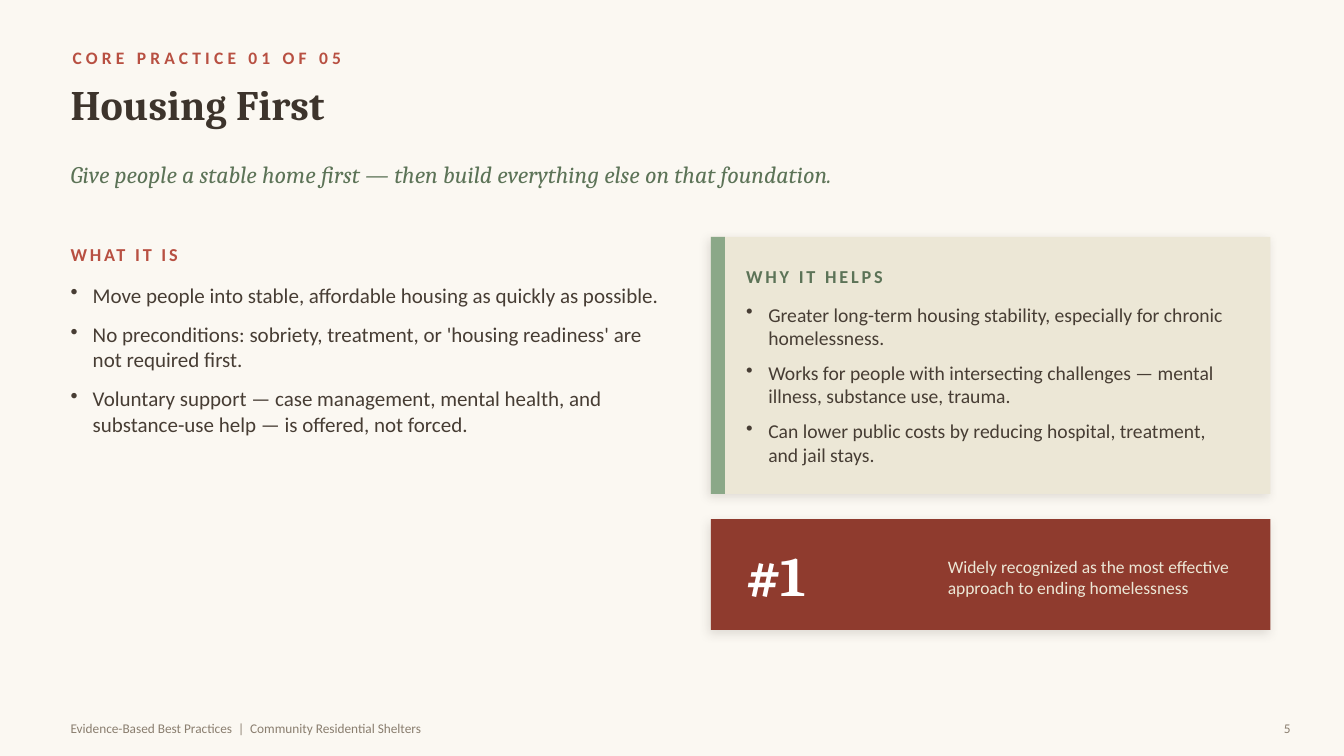
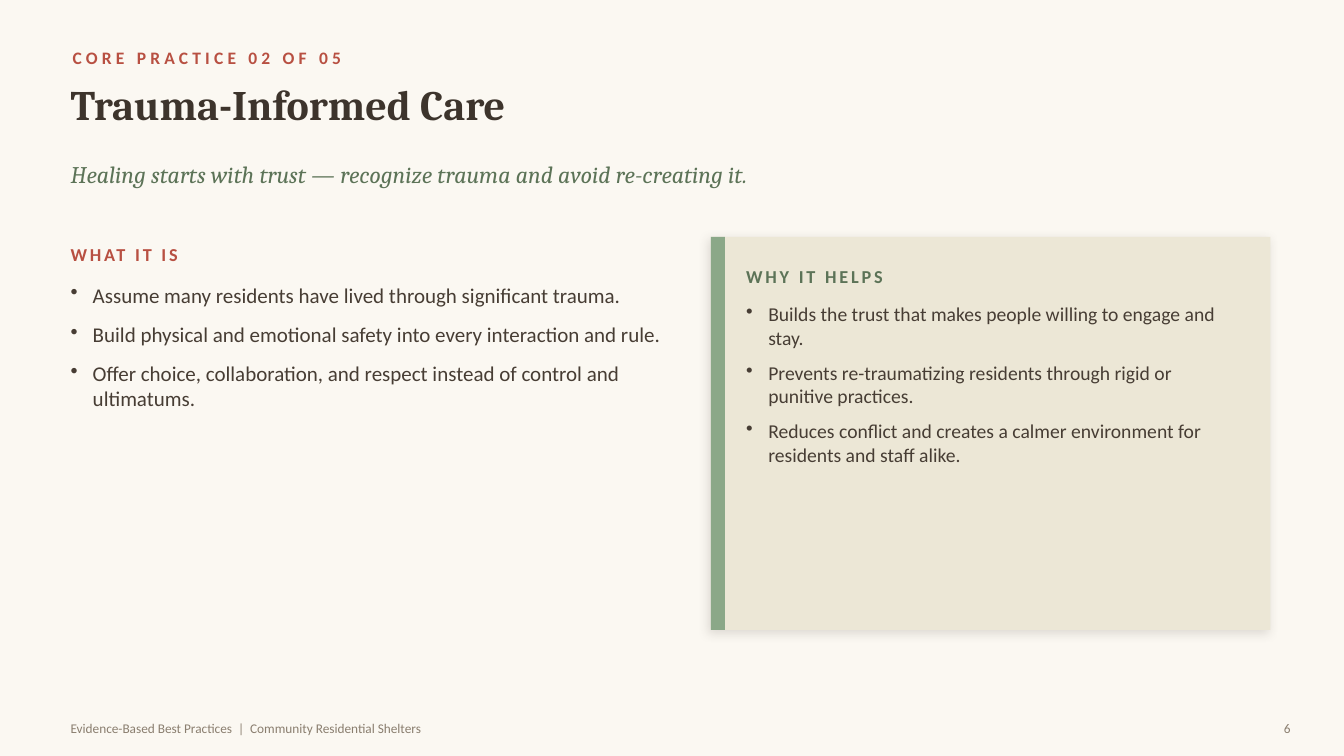
from lxml.etree import SubElement
from pptx import Presentation
from pptx.dml.color import RGBColor
from pptx.enum.shapes import MSO_SHAPE
from pptx.enum.text import MSO_ANCHOR, PP_ALIGN
from pptx.oxml.ns import qn
from pptx.util import Inches, Pt


class Theme:
    paper = "FBF8F2"
    sand = "ECE7D6"
    sage = "8BA888"
    moss = "5C7357"
    clay = "B85042"
    brick = "8F3B2E"
    ink = "3D342C"
    body = "473D34"
    muted = "8A7E6F"
    white = "FFFFFF"
    serif = "Cambria"
    sans = "Calibri"
    kicker = {"name": sans, "size": Pt(12.5), "bold": True, "color": clay, "spacing": 3}
    title = {"name": serif, "size": Pt(30), "bold": True, "color": ink}
    tagline = {"name": serif, "size": Pt(17), "italic": True, "color": moss}
    what_heading = {"name": sans, "size": Pt(13), "bold": True, "color": clay, "spacing": 2}
    why_heading = {**what_heading, "color": moss}
    what_list = {"name": sans, "size": Pt(15), "color": body}
    why_list = {**what_list, "size": Pt(14)}
    figure = {"name": serif, "size": Pt(40), "bold": True, "color": white}
    caption = {"name": sans, "size": Pt(12.5), "color": sand}
    footer = {"name": sans, "size": Pt(9.5), "color": muted}


class PracticeDeck:
    """Build core practice slides in one shared style."""

    left = 0.7
    card_left = 7.05
    card_text_left = 7.4
    card_top = 2.35
    card_width = 5.55
    card_bottom = 6.25
    stat_height = 1.1
    gap = 0.25

    def __init__(self, theme):
        self.theme = theme
        self.deck = Presentation()
        self.deck.slide_width = Inches(13.33)
        self.deck.slide_height = Inches(7.5)
        fill = self.deck.slide_master.background.fill
        fill.solid()
        fill.fore_color.rgb = RGBColor.from_string(theme.paper)
        self.slide = None

    def add_span(self, para, text, style):
        span = para.add_run()
        span.text = text
        for name, value in style.items():
            if name == "color":
                span.font.color.rgb = RGBColor.from_string(value)
            elif name == "spacing":
                span.font._element.set("spc", str(value * 100))
            else:
                setattr(span.font, name, value)

    def add_frame(self, left, top, width, height, anchor):
        box = self.slide.shapes.add_textbox(*map(Inches, (left, top, width, height)))
        frame = box.text_frame
        settings = {"word_wrap": True, "vertical_anchor": anchor, "margin_left": 0,
                    "margin_top": 0, "margin_right": 0, "margin_bottom": 0}
        for name, value in settings.items():
            setattr(frame, name, value)
        return frame

    def add_text(self, area, text, style, anchor=MSO_ANCHOR.MIDDLE, align=PP_ALIGN.LEFT):
        para = self.add_frame(*area, anchor).paragraphs[0]
        para.alignment = align
        self.add_span(para, text, style)

    def add_bullets(self, area, items, style, space_after):
        frame = self.add_frame(*area, MSO_ANCHOR.TOP)
        for index, item in enumerate(items):
            para = frame.add_paragraph() if index else frame.paragraphs[0]
            para.space_after = Pt(space_after)
            properties = para._p.get_or_add_pPr()
            properties.set("marL", str(Inches(0.22)))
            properties.set("indent", str(-Inches(0.22)))
            SubElement(properties, qn("a:buChar"), char="•")
            self.add_span(para, item, style)

    def add_panel(self, top, width, height, color, shadow=True):
        panel = self.slide.shapes.add_shape(
            MSO_SHAPE.RECTANGLE, *map(Inches, (self.card_left, top, width, height)))
        panel.fill.solid()
        panel.fill.fore_color.rgb = RGBColor.from_string(color)
        panel.line.fill.background()
        panel.shadow.inherit = False
        if shadow:
            effects = panel._element.spPr.find(qn("a:effectLst"))
            outer = SubElement(effects, qn("a:outerShdw"), blurRad=str(Pt(7)),
                               dist=str(Pt(3)), dir=str(135 * 60000),
                               algn="bl", rotWithShape="0")
            tint = SubElement(outer, qn("a:srgbClr"), val=self.theme.ink)
            SubElement(tint, qn("a:alpha"), val="14000")

    def add_header(self, kicker, title, tagline):
        theme = self.theme
        self.add_text((0.72, 0.42, 11.5, 0.3), kicker, theme.kicker)
        self.add_text((self.left, 0.78, 12.2, 0.9), title, theme.title, MSO_ANCHOR.TOP)
        self.add_text((self.left, 1.58, 11.9, 0.55), tagline, theme.tagline, MSO_ANCHOR.TOP)

    def add_what(self, items):
        self.add_text((self.left, self.card_top, 6, 0.35), "WHAT IT IS",
                      self.theme.what_heading)
        self.add_bullets((self.left, 2.8, 6, 2.6), items, self.theme.what_list, 10)

    def add_why(self, items, bottom):
        height = bottom - self.card_top
        self.add_panel(self.card_top, self.card_width, height, self.theme.sand)
        self.add_panel(self.card_top, 0.14, height, self.theme.sage, shadow=False)
        self.add_text((self.card_text_left, 2.57, 4.95, 0.35), "WHY IT HELPS",
                      self.theme.why_heading)
        self.add_bullets((self.card_text_left, 3, 4.9, bottom - 3.25), items,
                         self.theme.why_list, 8)

    def add_stat(self, figure, caption):
        top = self.card_bottom - self.stat_height
        self.add_panel(top, self.card_width, self.stat_height, self.theme.brick)
        self.add_text((self.card_text_left, top + 0.12, 2.1, 0.85), figure, self.theme.figure)
        self.add_text((9.4, top + 0.12, 2.95, 0.9), caption, self.theme.caption)

    def add_footer(self, number):
        self.add_text((self.left, 7.06, 10.5, 0.32),
                      "Evidence-Based Best Practices  |  Community Residential Shelters",
                      self.theme.footer)
        self.add_text((12.2, 7.06, 0.6, 0.32), str(number), self.theme.footer,
                      align=PP_ALIGN.RIGHT)

    def add_practice(self, number, page, title, tagline, what, why, stat=None):
        self.slide = self.deck.slides.add_slide(self.deck.slide_layouts[6])
        self.add_header(f"CORE PRACTICE {number:02d} OF 05", title, tagline)
        self.add_what(what)
        stat_space = self.stat_height + self.gap if stat else 0
        self.add_why(why, self.card_bottom - stat_space)
        if stat:
            self.add_stat(*stat)
        self.add_footer(page)


PRACTICES = [
    {
        "title": "Housing First",
        "tagline": "Give people a stable home first — then build everything else "
                   "on that foundation.",
        "what": [
            "Move people into stable, affordable housing as quickly as possible.",
            "No preconditions: sobriety, treatment, or 'housing readiness' are "
            "not required first.",
            "Voluntary support — case management, mental health, and "
            "substance-use help — is offered, not forced.",
        ],
        "why": [
            "Greater long-term housing stability, especially for chronic homelessness.",
            "Works for people with intersecting challenges — mental illness, "
            "substance use, trauma.",
            "Can lower public costs by reducing hospital, treatment, and jail stays.",
        ],
        "stat": ("#1", "Widely recognized as the most effective approach to "
                       "ending homelessness"),
    },
    {
        "title": "Trauma-Informed Care",
        "tagline": "Healing starts with trust — recognize trauma and avoid re-creating it.",
        "what": [
            "Assume many residents have lived through significant trauma.",
            "Build physical and emotional safety into every interaction and rule.",
            "Offer choice, collaboration, and respect instead of control and ultimatums.",
        ],
        "why": [
            "Builds the trust that makes people willing to engage and stay.",
            "Prevents re-traumatizing residents through rigid or punitive practices.",
            "Reduces conflict and creates a calmer environment for residents "
            "and staff alike.",
        ],
    },
]


def main():
    builder = PracticeDeck(Theme)
    for number, practice in enumerate(PRACTICES, start=1):
        builder.add_practice(number, number + 4, **practice)
    builder.deck.save("out.pptx")


if __name__ == "__main__":
    main()
